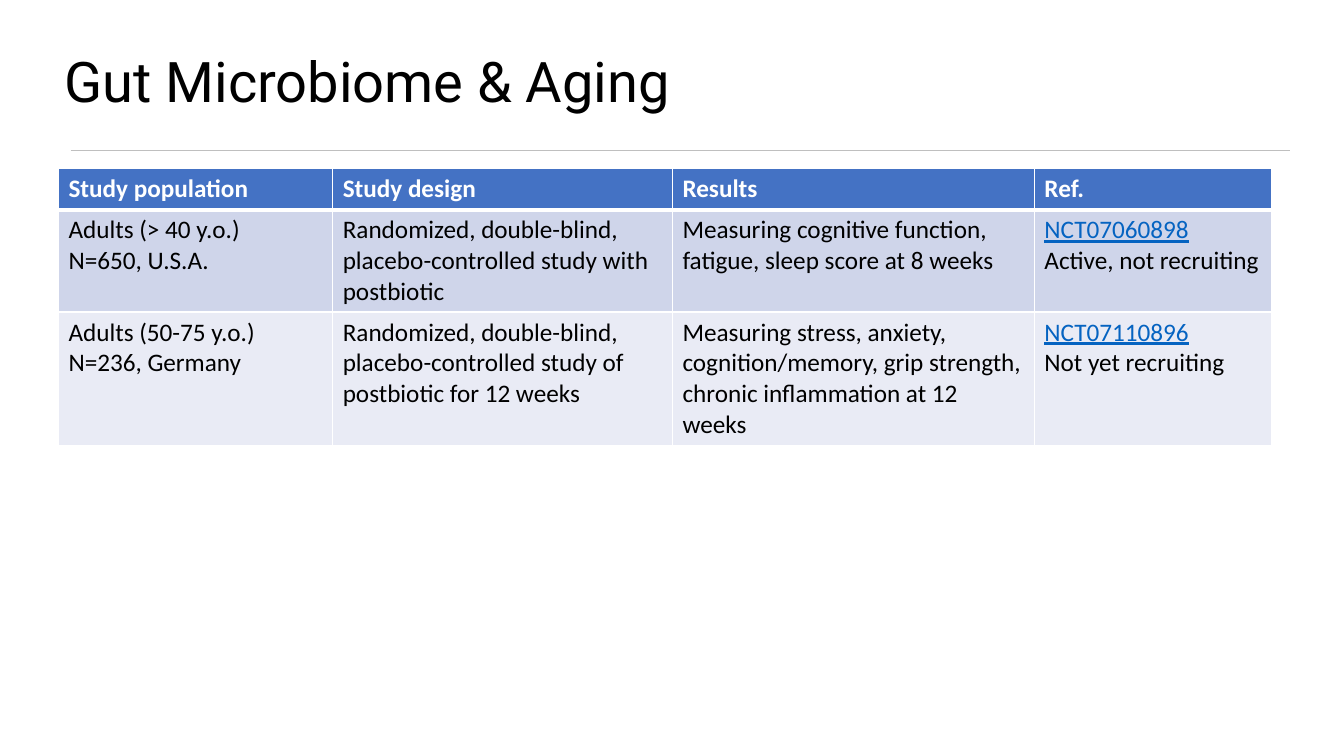
"""Build the gut microbiome and aging slide with its table of studies."""
from dataclasses import dataclass

from lxml.etree import SubElement
from pptx import Presentation
from pptx.dml.color import RGBColor
from pptx.enum.shapes import MSO_CONNECTOR as Connector
from pptx.enum.text import MSO_ANCHOR as Anchor, PP_ALIGN as Align
from pptx.oxml.ns import qn
from pptx.util import Inches, Pt


@dataclass(frozen=True)
class Theme:
    title_font: str = "Roboto"
    body_font: str = "Calibri"
    title_size: float = 40
    body_size: float = 18
    border: float = 1
    header_border: float = 3
    rule_width: float = 0.5
    ink: str = "000000"
    white: str = "FFFFFF"
    link: str = "0563C1"
    rule: str = "BFBFBF"
    header_fill: str = "4472C4"
    band_fills: tuple[str, str] = ("CFD5EA", "E9EBF5")


@dataclass(frozen=True)
class Study:
    population: str
    design: str
    results: str
    trial_id: str
    status: str

    def cells(self) -> tuple[str, ...]:
        return self.population, self.design, self.results, f"{self.trial_id}\n{self.status}"


THEME = Theme()
HEADINGS = ("Study population", "Study design", "Results", "Ref.")
COLUMN_WIDTHS = (2.72, 3.37, 3.59, 2.35)
ROW_HEIGHTS = (0.41, 1.0, 1.3)
STUDIES = (
    Study("Adults (> 40 y.o.)\nN=650, U.S.A.",
          "Randomized, double-blind, placebo-controlled study with postbiotic",
          "Measuring cognitive function, fatigue, sleep score at 8 weeks",
          "NCT07060898", "Active, not recruiting"),
    Study("Adults (50-75 y.o.)\nN=236, Germany",
          "Randomized, double-blind, placebo-controlled study of postbiotic for 12 weeks",
          "Measuring stress, anxiety, cognition/memory, grip strength, "
          "chronic inflammation at 12 weeks",
          "NCT07110896", "Not yet recruiting"),
)


def color(code: str) -> RGBColor:
    return RGBColor.from_string(code)


def style_font(font, name: str, size: float, code: str) -> None:
    font.name = name
    font.size = Pt(size)
    font.color.rgb = color(code)


def add_rule(slide) -> None:
    rule = slide.shapes.add_connector(
        Connector.STRAIGHT, Inches(0.7), Inches(1.49), Inches(12.79), Inches(1.49))
    rule.line.color.rgb = color(THEME.rule)
    rule.line.width = Pt(THEME.rule_width)
    SubElement(rule._element.spPr, qn("a:effectLst"))


def set_title(slide, text: str) -> None:
    title = slide.shapes.title
    title.left, title.top = Inches(0.54), Inches(0.49)
    title.width, title.height = Inches(11.5), Inches(1.45)
    frame = title.text_frame
    frame.text = text
    frame.vertical_anchor = Anchor.TOP
    heading = frame.paragraphs[0]
    heading.alignment = Align.LEFT
    heading.line_spacing = 0.9
    style_font(heading.runs[0].font, THEME.title_font, THEME.title_size, THEME.ink)


def set_borders(cell, top: float, bottom: float) -> None:
    widths = {"L": THEME.border, "R": THEME.border, "T": top, "B": bottom}
    properties = cell._tc.get_or_add_tcPr()
    for side, width in widths.items():
        edge = SubElement(properties, qn(f"a:ln{side}"), w=str(Pt(width)))
        edge_fill = SubElement(edge, qn("a:solidFill"))
        SubElement(edge_fill, qn("a:srgbClr"), val=THEME.white)


def fill_cell(cell, text: str, row: int) -> None:
    is_header = row == 0
    set_borders(cell,
                top=THEME.header_border if row == 1 else THEME.border,
                bottom=THEME.header_border if is_header else THEME.border)
    cell.fill.solid()
    cell.fill.fore_color.rgb = color(
        THEME.header_fill if is_header else THEME.band_fills[(row - 1) % 2])
    cell.text_frame.text = text
    for paragraph in cell.text_frame.paragraphs:
        font = paragraph.runs[0].font
        style_font(font, THEME.body_font, THEME.body_size,
                   THEME.white if is_header else THEME.ink)
        font.bold = is_header


def mark_trial_id(cell) -> None:
    font = cell.text_frame.paragraphs[0].runs[0].font
    font.color.rgb = color(THEME.link)
    font.underline = True


def add_studies(slide) -> None:
    rows = (HEADINGS, *(study.cells() for study in STUDIES))
    studies = slide.shapes.add_table(
        len(rows), len(HEADINGS), Inches(0.58), Inches(1.67),
        Inches(sum(COLUMN_WIDTHS)), Inches(sum(ROW_HEIGHTS))).table
    for column, width in zip(studies.columns, COLUMN_WIDTHS):
        column.width = Inches(width)
    for row, (texts, height) in enumerate(zip(rows, ROW_HEIGHTS)):
        studies.rows[row].height = Inches(height)
        for column, text in enumerate(texts):
            fill_cell(studies.cell(row, column), text, row)
        if row > 0:
            mark_trial_id(studies.cell(row, len(HEADINGS) - 1))


def main() -> None:
    deck = Presentation()
    deck.slide_width, deck.slide_height = Inches(13.33), Inches(7.5)
    slide = deck.slides.add_slide(deck.slide_layouts.get_by_name("Title Only"))
    slide.background.fill.solid()
    slide.background.fill.fore_color.rgb = color(THEME.white)
    add_rule(slide)
    set_title(slide, "Gut Microbiome & Aging")
    add_studies(slide)
    deck.save("out.pptx")


if __name__ == "__main__":
    main()
